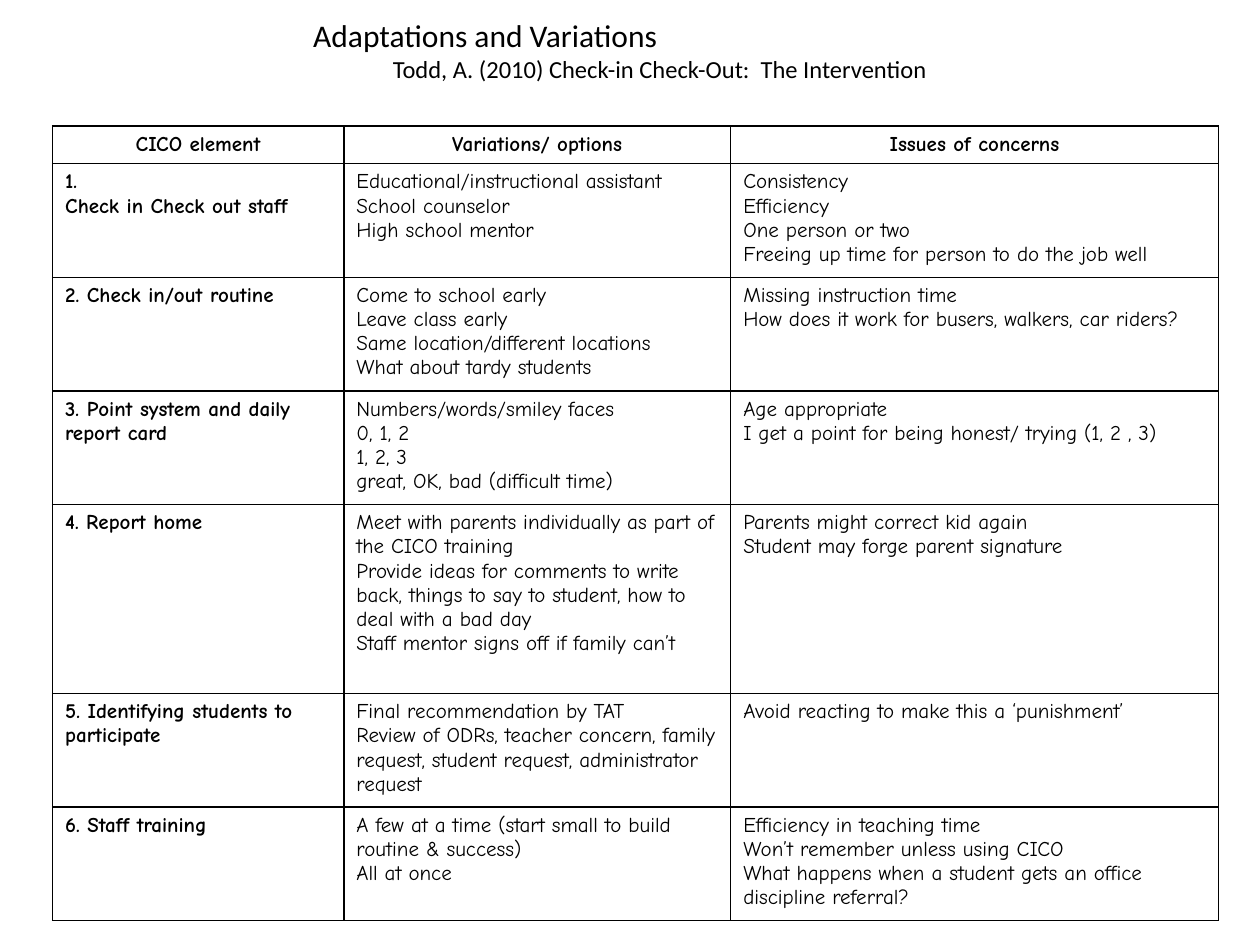
from lxml.etree import SubElement
from pptx import Presentation
from pptx.dml.color import RGBColor
from pptx.enum.text import MSO_ANCHOR, MSO_AUTO_SIZE, PP_ALIGN
from pptx.oxml.ns import qn
from pptx.util import Cm, Pt

BLACK = RGBColor(0, 0, 0)
WHITE = RGBColor(255, 255, 255)
TITLE_FONT = "Calibri"
TABLE_FONT = "Comic Neue"
COLUMN_WIDTHS = (5.87, 7.8, 9.83)
ROW_HEIGHTS = (0.76, 2.29, 2.29, 2.29, 3.81, 2.29, 2.29)
HEADINGS = (["CICO element"], ["Variations/ options"], ["Issues of concerns"])
ELEMENTS = (
    (["1.", "Check in Check out staff"],
     ["Educational/instructional assistant", "School counselor",
      "High school mentor"],
     ["Consistency", "Efficiency", "One person or two",
      "Freeing up time for person to do the job well"]),
    (["2. Check in/out routine"],
     ["Come to school early", "Leave class early",
      "Same location/different locations", "What about tardy students"],
     ["Missing instruction time",
      "How does it work for busers, walkers, car riders?"]),
    (["3. Point system and daily report card"],
     ["Numbers/words/smiley faces", "0, 1, 2", "1, 2, 3",
      "great, OK, bad (difficult time)"],
     ["Age appropriate", "I get a point for being honest/ trying (1, 2 , 3)"]),
    (["4. Report home"],
     ["Meet with parents individually as part of the CICO training",
      "Provide ideas for comments to write back, things to say to student, "
      "how to deal with a bad day",
      "Staff mentor signs off if family can’t"],
     ["Parents might correct kid again", "Student may forge parent signature"]),
    (["5. Identifying students to participate"],
     ["Final recommendation by TAT",
      "Review of ODRs, teacher concern, family request, student request, "
      "administrator request"],
     ["Avoid reacting to make this a ‘punishment’"]),
    (["6. Staff training"],
     ["A few at a time (start small to build routine & success)",
      "All at once"],
     ["Efficiency in teaching time", "Won’t remember unless using CICO",
      "What happens when a student gets an office discipline referral?"]),
)


def add_run(p, text, font, size, bold=False):
    """Add one formatted run to a paragraph."""
    r = p.add_run()
    r.text = text
    r.font.name = font
    r.font.size = Pt(size)
    r.font.bold = bold
    r.font.color.rgb = BLACK


def add_borders(cell):
    """Draw a thin black line on all four sides of a cell."""
    tcPr = cell._tc.get_or_add_tcPr()
    for side in ("lnL", "lnR", "lnT", "lnB"):
        ln = SubElement(tcPr, qn(f"a:{side}"), w=str(Pt(1)))
        fill = SubElement(ln, qn("a:solidFill"))
        SubElement(fill, qn("a:srgbClr"), val=str(BLACK))


def fill_cell(cell, lines, heading, bold):
    """Write the lines of a cell, one paragraph each, and style the cell."""
    add_borders(cell)
    cell.fill.solid()
    cell.fill.fore_color.rgb = WHITE
    tf = cell.text_frame
    for i, line in enumerate(lines):
        p = tf.paragraphs[0] if i == 0 else tf.add_paragraph()
        p.alignment = PP_ALIGN.CENTER if heading else PP_ALIGN.LEFT
        add_run(p, line, TABLE_FONT, 12, bold)


def place_title(slide, left, top, width, height):
    """Place the title with its centred source line below."""
    sp = slide.shapes.title
    sp.left, sp.top, sp.width, sp.height = left, top, width, height
    tf = sp.text_frame
    tf.word_wrap = True
    tf.auto_size = MSO_AUTO_SIZE.NONE
    tf.vertical_anchor = MSO_ANCHOR.TOP
    p = tf.paragraphs[0]
    p.alignment = PP_ALIGN.LEFT
    p._p.get_or_add_pPr().set("marL", str(Cm(0.55)))
    add_run(p, "Adaptations and Variations", TITLE_FONT, 18)
    p = tf.add_paragraph()
    p.alignment = PP_ALIGN.CENTER
    add_run(p, "Todd, A. (2010) Check-in Check-Out:  The Intervention",
            TITLE_FONT, 14)


def place_table(slide, left, top, width, height):
    """Place the table of CICO elements, options and concerns."""
    rows = (HEADINGS, *ELEMENTS)
    table = slide.shapes.add_table(
        len(rows), len(HEADINGS), left, top, width, height).table
    table.horz_banding = False
    for column, w in zip(table.columns, COLUMN_WIDTHS):
        column.width = Cm(w)
    for row, h in zip(table.rows, ROW_HEIGHTS):
        row.height = Cm(h)
    for i, row in enumerate(rows):
        for j, lines in enumerate(row):
            fill_cell(table.cell(i, j), lines, i == 0, i == 0 or j == 0)


def main():
    """Build the slide and save it."""
    prs = Presentation()
    prs.slide_width, prs.slide_height = Cm(25.4), Cm(19.05)
    slide = prs.slides.add_slide(prs.slide_layouts[5])
    place_title(slide, Cm(5.51), Cm(0.2), Cm(15.04), Cm(1.63))
    place_table(slide, Cm(1.06), Cm(2.54),
                Cm(sum(COLUMN_WIDTHS)), Cm(sum(ROW_HEIGHTS)))
    prs.save("out.pptx")


if __name__ == "__main__":
    main()
